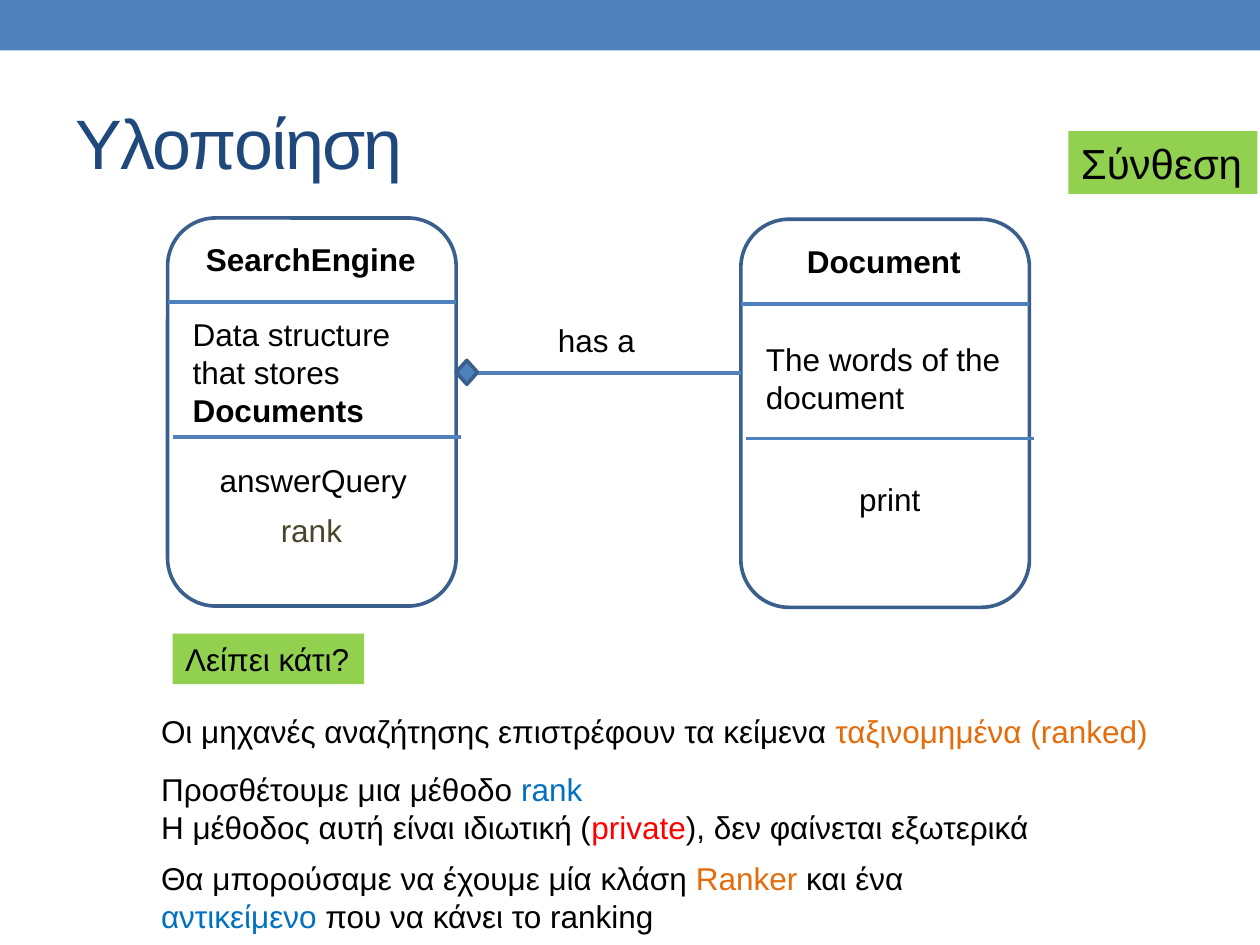
"""Builds a slide on composition between two classes of a search engine."""
from collections import namedtuple

from lxml import etree
from pptx import Presentation
from pptx.dml.color import RGBColor
from pptx.enum.shapes import MSO_CONNECTOR, MSO_SHAPE
from pptx.enum.text import MSO_ANCHOR, MSO_AUTO_SIZE
from pptx.oxml.ns import qn
from pptx.util import Inches, Pt

STRAIGHT = MSO_CONNECTOR.STRAIGHT
RECTANGLE, ROUNDED, DIAMOND = MSO_SHAPE.RECTANGLE, MSO_SHAPE.ROUNDED_RECTANGLE, MSO_SHAPE.DIAMOND
MIDDLE, TOP = MSO_ANCHOR.MIDDLE, MSO_ANCHOR.TOP
FIT, FIXED = MSO_AUTO_SIZE.SHAPE_TO_FIT_TEXT, MSO_AUTO_SIZE.NONE

COLORS = {
    "accent": "4F81BD", "outline": "3A5F8C", "title": "1F497D", "text": "000000",
    "label": "92D050", "orange": "E46C0A", "blue": "0070C0", "red": "FF0000", "olive": "4A452A",
}
FONT = "Arial"
COLUMNS, ROWS = 100, 75
CELL = Inches(0.1)
ONE_LINE, TWO_LINES, THREE_LINES = 4, 7.1, 10.1

Box = namedtuple("Box", "left top width height")


def cells(*counts):
    """Turn counts of grid cells into lengths."""
    return [round(count * CELL) for count in counts]


def color(name):
    """Look up a named colour."""
    return RGBColor.from_string(COLORS[name])


def add_figure(page, kind, box, fill=None, outline=None):
    """Draw a preset shape in the box."""
    figure = page.shapes.add_shape(kind, *cells(*box))
    figure.shadow.inherit = False
    if fill:
        figure.fill.solid()
        figure.fill.fore_color.rgb = color(fill)
    else:
        figure.fill.background()
    if outline:
        figure.line.color.rgb = color(outline)
        figure.line.width = Pt(2.08)
    else:
        figure.line.fill.background()
    return figure


def add_rule(page, left, right, row):
    """Draw a horizontal line between two columns."""
    rule = page.shapes.add_connector(STRAIGHT, *cells(left, row, right, row))
    rule.line.color.rgb = color("accent")
    rule.line.width = Pt(2.25)
    etree.SubElement(rule._element.spPr, qn("a:effectLst"))


def add_text(page, box, *paragraphs, size=18, ink="text", bold=False, wrap=False,
             fit=FIT, anchor=TOP, spacing=None, fill=None):
    """Write paragraphs, each a string or a list of (text, format) spans."""
    holder = page.shapes.add_textbox(*cells(*box))
    if fill:
        holder.fill.solid()
        holder.fill.fore_color.rgb = color(fill)
    frame = holder.text_frame
    frame.word_wrap, frame.auto_size, frame.vertical_anchor = wrap, fit, anchor
    for index, content in enumerate(paragraphs):
        para = frame.add_paragraph() if index else frame.paragraphs[0]
        spans = [(content, {})] if isinstance(content, str) else content
        for text, style in spans:
            span = para.add_run()
            span.text = text
            span.font.name, span.font.size = FONT, Pt(size)
            span.font.bold = style.get("bold", bold)
            span.font.color.rgb = color(style.get("ink", ink))
            if spacing is not None:
                span._r.get_or_add_rPr().set("spc", str(spacing))


def add_heading(page, box):
    """Place the top band, the title and the topic label."""
    add_figure(page, RECTANGLE, Box(box.left, box.top, box.width, 4), fill="accent")
    add_text(page, Box(box.left + 5, box.top + 5.8, box.width - 10, 10.8), "Υλοποίηση",
             size=40, ink="title", wrap=True, fit=FIXED, anchor=MIDDLE, spacing=-100)
    add_text(page, Box(box.left + box.width - 15.2, box.top + 10.4, 15, 5), "Σύνθεση",
             size=24, fill="label")


def add_class(page, box, name, name_width, fields, field_top, field_height, methods):
    """Draw a class with its name, fields and methods in three compartments."""
    right = box.left + box.width
    add_figure(page, ROUNDED, box, outline="outline")
    add_rule(page, box.left, right, box.top + 6.7)
    add_rule(page, box.left + 0.4, right + 0.4, box.top + 17.4)
    center = box.left + box.width / 2
    add_text(page, Box(center - name_width / 2, box.top + 1.3, name_width, ONE_LINE),
             name, bold=True)
    add_text(page, Box(box.left + 1, box.top + field_top, box.width - 1, field_height),
             fields, wrap=True)
    for method, width, shift, top, ink in methods:
        add_text(page, Box(center + shift - width / 2, box.top + top, width, ONE_LINE),
                 method, ink=ink)


def add_composition(page, box):
    """Join two classes by a line that starts with a diamond."""
    diamond = Box(box.left, box.top + box.height - 1, 1.7, 1.9)
    add_rule(page, diamond.left + diamond.width, box.left + box.width, box.top + box.height)
    add_figure(page, DIAMOND, diamond, fill="accent", outline="outline")
    add_text(page, Box(box.left + 7.1, box.top, 8.2, ONE_LINE), "has a")


def add_notes(page, box):
    """Write the question and the remarks below the diagram."""
    orange, blue, red = ({"ink": name} for name in ("orange", "blue", "red"))
    add_text(page, Box(box.left + 1.9, box.top, 15.2, ONE_LINE), "Λείπει κάτι?", fill="label")
    add_text(page, Box(box.left, box.top + 5.7, box.width, ONE_LINE),
             [("Οι μηχανές αναζήτησης επιστρέφουν τα κείμενα ", {}),
              ("ταξινομημένα (ranked)", orange)])
    add_text(page, Box(box.left, box.top + 10.3, 71.5, TWO_LINES),
             [("Προσθέτουμε μια μέθοδο ", {}), ("rank", blue)],
             [("H μέθοδος αυτή είναι ιδιωτική (", {}), ("private", red),
              ("), δεν φαίνεται εξωτερικά", {})])
    add_text(page, Box(box.left, box.top + 17.4, 73, TWO_LINES),
             [("Θα μπορούσαμε να έχουμε μία κλάση ", {}), ("Ranker ", orange),
              ("και ένα ", {}), ("αντικείμενο", blue), (" που να κάνει το ranking", {})],
             wrap=True)


def main():
    """Build and save the deck."""
    deck = Presentation()
    deck.slide_width, deck.slide_height = cells(COLUMNS, ROWS)
    page = deck.slides.add_slide(deck.slide_layouts[6])
    engine = Box(13.3, 17.3, 22.9, 30.8)
    document = engine._replace(left=58.8, top=17.4)
    joint = engine.left + engine.width
    add_heading(page, Box(0, 0, COLUMNS, 17))
    add_class(page, engine, "SearchEngine", 18.8,
              [("Data structure that stores ", {}), ("Documents", {"bold": True})],
              7.2, THREE_LINES,
              [("answerQuery", 17, 0.2, 18.8, "text"), ("rank", 6.9, 0, 22.8, "olive")])
    add_class(page, document, "Document", 14.4, "The words of the document",
              9.1, TWO_LINES, [("print", 6.9, 0.4, 20.2, "text")])
    add_composition(page, Box(joint, 25, document.left - joint, 4.6))
    add_notes(page, Box(11.8, 50.3, 81, 24.5))
    deck.save("out.pptx")


if __name__ == "__main__":
    main()
